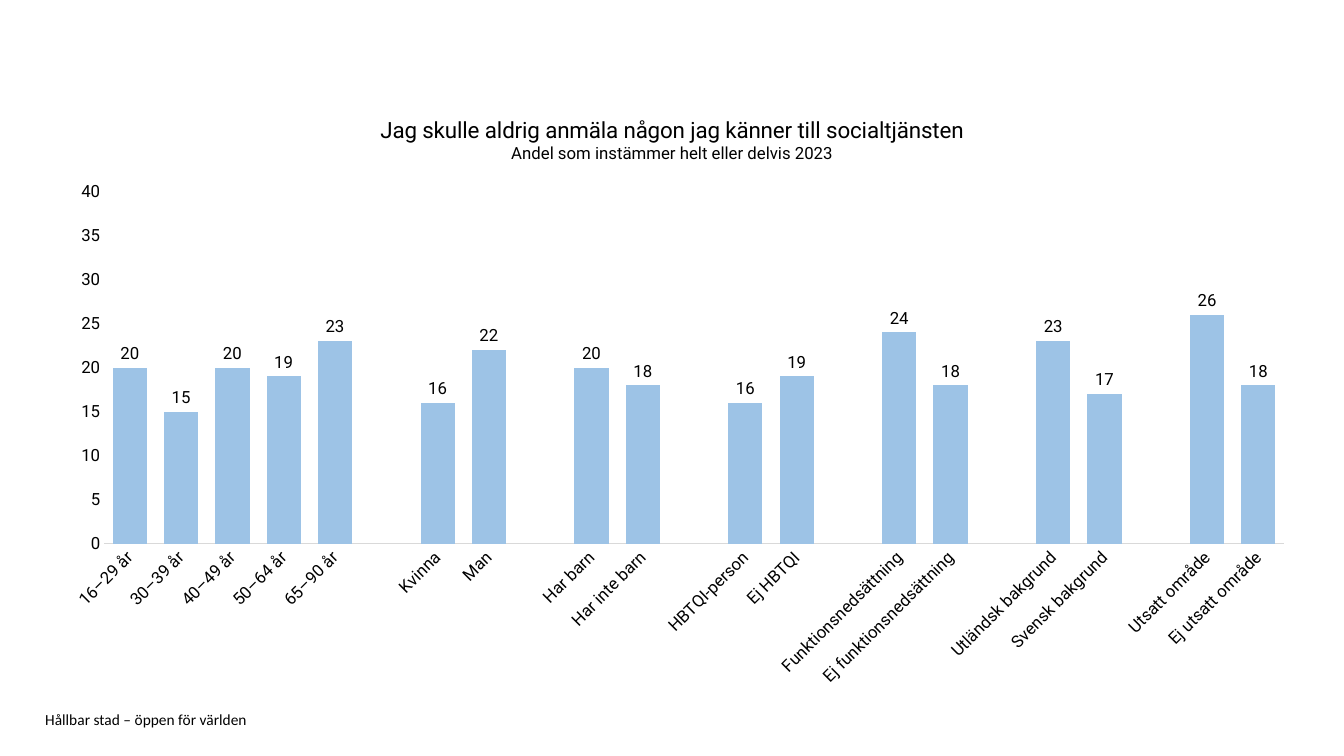
from lxml import etree
from pptx import Presentation
from pptx import util as u
from pptx.chart import data
from pptx.dml.color import RGBColor
from pptx.enum import chart as ch, text
from pptx.oxml import ns


class Theme:
    ink = RGBColor.from_string("000000")
    bar = RGBColor.from_string("9DC3E6")
    rule = RGBColor.from_string("D9D9D9")
    face = "Roboto"
    foot = "Calibri"
    head = 16
    label = 12
    small = 11


TITLE = "Jag skulle aldrig anmäla någon jag känner till socialtjänsten"
SUB = "Andel som instämmer helt eller delvis 2023"
GROUPS = [
    [("16–29 år", 20), ("30–39 år", 15), ("40–49 år", 20), ("50–64 år", 19), ("65–90 år", 23)],
    [("Kvinna", 16), ("Man", 22)],
    [("Har barn", 20), ("Har inte barn", 18)],
    [("HBTQI-person", 16), ("Ej HBTQI", 19)],
    [("Funktionsnedsättning", 24), ("Ej funktionsnedsättning", 18)],
    [("Utländsk bakgrund", 23), ("Svensk bakgrund", 17)],
    [("Utsatt område", 26), ("Ej utsatt område", 18)],
]


def write(para, words, size=Theme.label, face=Theme.face, color=Theme.ink):
    run = para.add_run()
    run.text = words
    style(run.font, size, face, color)


def style(font, size=Theme.label, face=Theme.face, color=Theme.ink):
    font.size = u.Pt(size)
    font.name = face
    font.bold = False
    font.color.rgb = color


class Deck:
    def __init__(self, theme):
        self.theme = theme
        self.prs = Presentation()
        self.prs.slide_width = u.Cm(33.87)
        self.prs.slide_height = u.Cm(19.05)
        self.page = self.prs.slides.add_slide(self.prs.slide_layouts[6])

    def footer(self, words, *box):
        frame = self.page.shapes.add_textbox(*map(u.Cm, box)).text_frame
        frame.word_wrap = True
        frame.vertical_anchor = text.MSO_ANCHOR.MIDDLE
        frame.margin_left = frame.margin_right = 0
        frame.margin_top = frame.margin_bottom = 0
        write(frame.paragraphs[0], words, size=self.theme.small, face=self.theme.foot)

    def bars(self, groups, title, sub, *box):
        rows = list(groups[0])
        for group in groups[1:]:
            rows += [("", None), *group]
        table = data.CategoryChartData()
        table.categories = [name for name, _ in rows]
        table.add_series(f"{title} {sub}", [value for _, value in rows])
        kind = ch.XL_CHART_TYPE.COLUMN_CLUSTERED
        chart = self.page.shapes.add_chart(kind, *map(u.Cm, box), table).chart
        style(chart.font)
        chart.has_legend = False
        self.heading(chart, title, sub)
        self.axes(chart)
        self.fill(chart.plots[0])
        self.place(chart, x=0.047, y=0.156, w=0.941, h=0.573)

    def heading(self, chart, title, sub):
        chart.has_title = True
        chart.chart_title.include_in_layout = False
        frame = chart.chart_title.text_frame
        write(frame.paragraphs[0], title, size=self.theme.head)
        write(frame.add_paragraph(), sub)

    def axes(self, chart):
        for axis in (chart.category_axis, chart.value_axis):
            axis.major_tick_mark = axis.minor_tick_mark = ch.XL_TICK_MARK.NONE
            axis.has_major_gridlines = False
            style(axis.tick_labels.font)
        cat, val = chart.category_axis, chart.value_axis
        cat.format.line.color.rgb = self.theme.rule
        cat.format.line.width = u.Pt(0.75)
        body = cat._element.find(ns.qn("c:txPr")).find(ns.qn("a:bodyPr"))
        body.set("rot", "-2700000")
        body.set("vert", "horz")
        val.format.line.fill.background()
        val.minimum_scale, val.maximum_scale, val.major_unit = 0, 40, 5

    def fill(self, plot):
        plot.gap_width = 50
        plot.vary_by_categories = False
        ink = plot.series[0].format.fill
        ink.solid()
        ink.fore_color.rgb = self.theme.bar
        plot.has_data_labels = True
        tags = plot.data_labels
        tags.show_value = True
        tags.position = ch.XL_LABEL_POSITION.OUTSIDE_END
        style(tags.font)

    def place(self, chart, **frame):
        area = chart._chartSpace.chart.plotArea
        for old in area.findall(ns.qn("c:layout")):
            area.remove(old)
        outer = etree.Element(ns.qn("c:layout"))
        inner = etree.SubElement(outer, ns.qn("c:manualLayout"))
        parts = {"layoutTarget": "inner", "xMode": "edge", "yMode": "edge", **frame}
        for tag, value in parts.items():
            etree.SubElement(inner, ns.qn(f"c:{tag}")).set("val", str(value))
        area.insert(0, outer)

    def save(self):
        self.prs.save("out.pptx")


def main():
    deck = Deck(Theme)
    deck.footer("Hållbar stad – öppen för världen", 1.14, 17.93, 24, 0.41)
    deck.bars(GROUPS, TITLE, SUB, 1.14, 2.41, 31.6, 15.49)
    deck.save()


if __name__ == "__main__":
    main()
